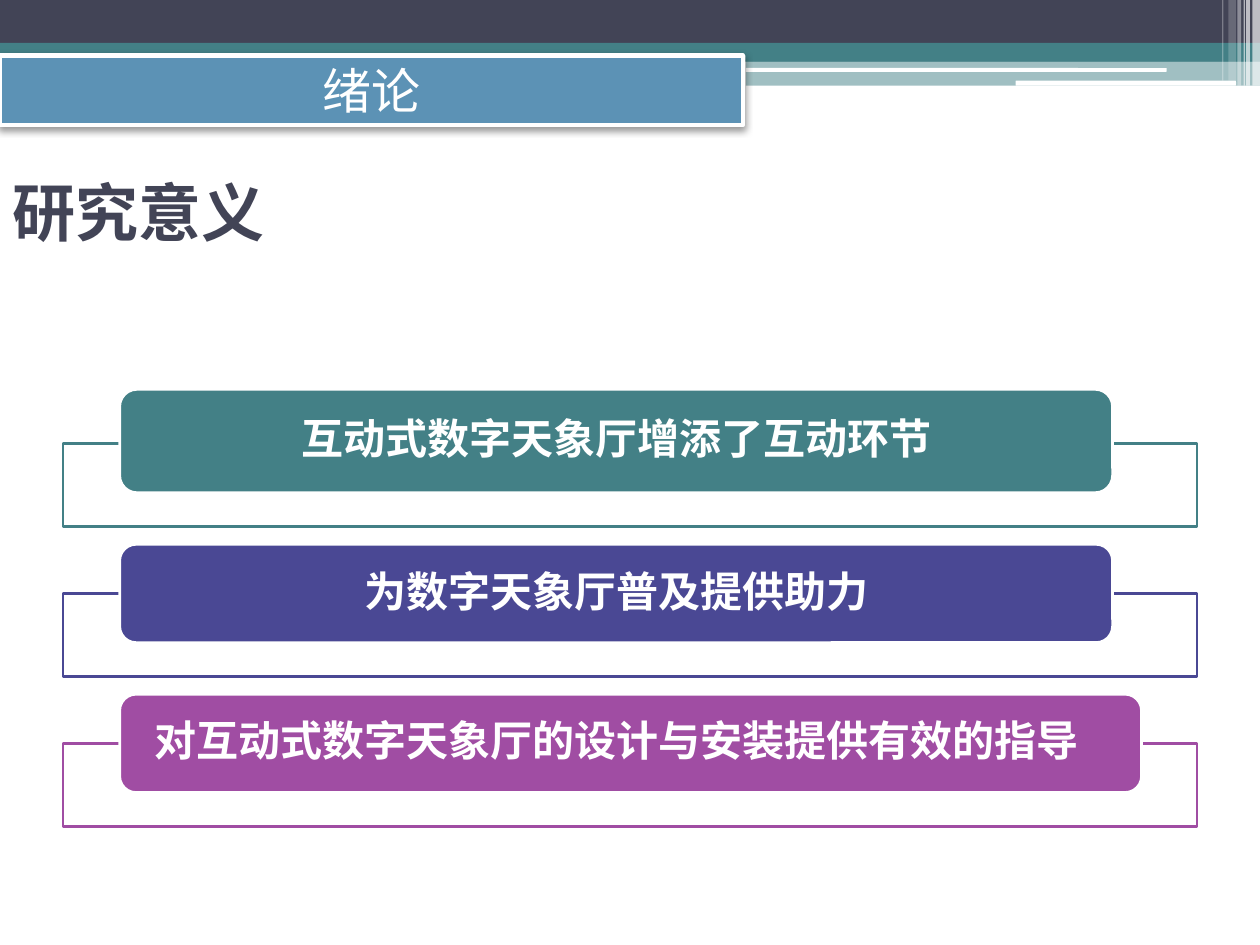
from lxml.etree import SubElement
from pptx import Presentation
from pptx.dml.color import RGBColor
from pptx.enum.shapes import MSO_SHAPE as Shape
from pptx.enum.text import MSO_ANCHOR as Anchor, PP_ALIGN as Align
from pptx.oxml.ns import qn
from pptx.util import Inches, Pt

WHITE = RGBColor(0xFF, 0xFF, 0xFF)
SLATE = RGBColor(0x42, 0x44, 0x56)
TEAL = RGBColor(0x43, 0x80, 0x86)
INDIGO = RGBColor(0x4A, 0x48, 0x94)
PURPLE = RGBColor(0xA0, 0x4D, 0xA3)
BLUE = RGBColor(0x5C, 0x92, 0xB5)

deck = Presentation()
deck.slide_width, deck.slide_height = Inches(10), Inches(7.5)
slide = deck.slides.add_slide(deck.slide_layouts[6])


def add_block(kind, box, color, opacity=100, outline=None, weight=1.5):
    block = slide.shapes.add_shape(kind, *map(Inches, box))
    block.shadow.inherit = False
    block.fill.solid()
    block.fill.fore_color.rgb = color
    if opacity < 100:
        tint = block.fill._xPr.find(qn("a:solidFill"))[0]
        SubElement(tint, qn("a:alpha"), val=str(opacity * 1000))
    if outline is None:
        block.line.fill.background()
    else:
        block.line.color.rgb = outline
        block.line.width = Pt(weight)
    return block


def write(holder, wording, size, font, color, bold=False, align=Align.CENTER):
    frame = holder.text_frame
    frame.word_wrap = True
    frame.vertical_anchor = Anchor.MIDDLE
    paragraph = frame.paragraphs[0]
    paragraph.text = wording
    paragraph.alignment = align
    paragraph.font.size = Pt(size)
    paragraph.font.name = font
    paragraph.font.bold = bold
    paragraph.font.color.rgb = color
    return paragraph


header_bars = [
    (Shape.RECTANGLE, (0, 0.4, 10, 0.09), TEAL, 50),
    (Shape.RECTANGLE, (0, 0, 10, 0.34), SLATE, 100),
    (Shape.RECTANGLE, (0, 0.34, 10, 0.1), TEAL, 100),
    (Shape.RECTANGLE, (5.92, 0.39, 4.08, 0.1), TEAL, 100),
    (Shape.RECTANGLE, (5.92, 0.48, 4.08, 0.2), TEAL, 50),
    (Shape.ROUNDED_RECTANGLE, (5.91, 0.54, 3.35, 0.03), WHITE, 100),
    (Shape.ROUNDED_RECTANGLE, (8.06, 0.64, 1.75, 0.04), WHITE, 100),
]
for kind, box, color, opacity in header_bars:
    add_block(kind, box, color, opacity)

corner_stripes = [
    (9.94, 0.06, 0.68, 65),
    (9.89, 0.03, 0.68, 65),
    (9.87, 0.01, 0.68, 60),
    (9.82, 0.03, 0.68, 40),
    (9.75, 0.06, 0.64, 20),
    (9.7, 0.01, 0.64, 30),
]
for left, width, height, opacity in corner_stripes:
    add_block(Shape.RECTANGLE, (left, 0, width, height), WHITE, opacity)

title = slide.shapes.add_textbox(0, Inches(1.09), Inches(9), Inches(1.17))
write(title, "研究意义", 36, "Karla", SLATE, True, Align.LEFT)

first_frame, row_pitch, frame_height, overlap = 3.52, 1.19, 0.66, 0.39
points = [
    ("互动式数字天象厅增添了互动环节", TEAL, 7.88, 0.82, Align.CENTER),
    ("为数字天象厅普及提供助力", INDIGO, 7.88, 0.78, Align.CENTER),
    ("对互动式数字天象厅的设计与安装提供有效的指导", PURPLE, 8.11, 0.78, Align.LEFT),
]
for row, (wording, color, width, height, align) in enumerate(points):
    top = first_frame + row * row_pitch
    add_block(Shape.RECTANGLE, (0.5, top, 9, frame_height), WHITE, 90, color)
    label_box = (0.95, top + overlap - height, width, height)
    label = add_block(Shape.ROUNDED_RECTANGLE, label_box, color, outline=WHITE)
    label.text_frame.margin_left = label.text_frame.margin_right = Inches(0.24)
    label.text_frame.margin_top = label.text_frame.margin_bottom = 0
    paragraph = write(label, wording, 24, "Noto Sans CJK JP", WHITE, True, align)
    paragraph.line_spacing = 0.9

chapter = add_block(Shape.RECTANGLE, (0, 0.44, 5.9, 0.55), BLUE, outline=WHITE, weight=2.5)
write(chapter, "绪论", 28, "Noto Sans CJK SC", WHITE)
effects = chapter._element.spPr.find(qn("a:effectLst"))
shadow = SubElement(effects, qn("a:outerShdw"), blurRad=str(Pt(4.1)), dist=str(Pt(2)),
                    dir="5400000", algn="ctr", rotWithShape="0")
shade = SubElement(shadow, qn("a:srgbClr"), val="000000")
SubElement(shade, qn("a:alpha"), val="40000")

deck.save("out.pptx")
